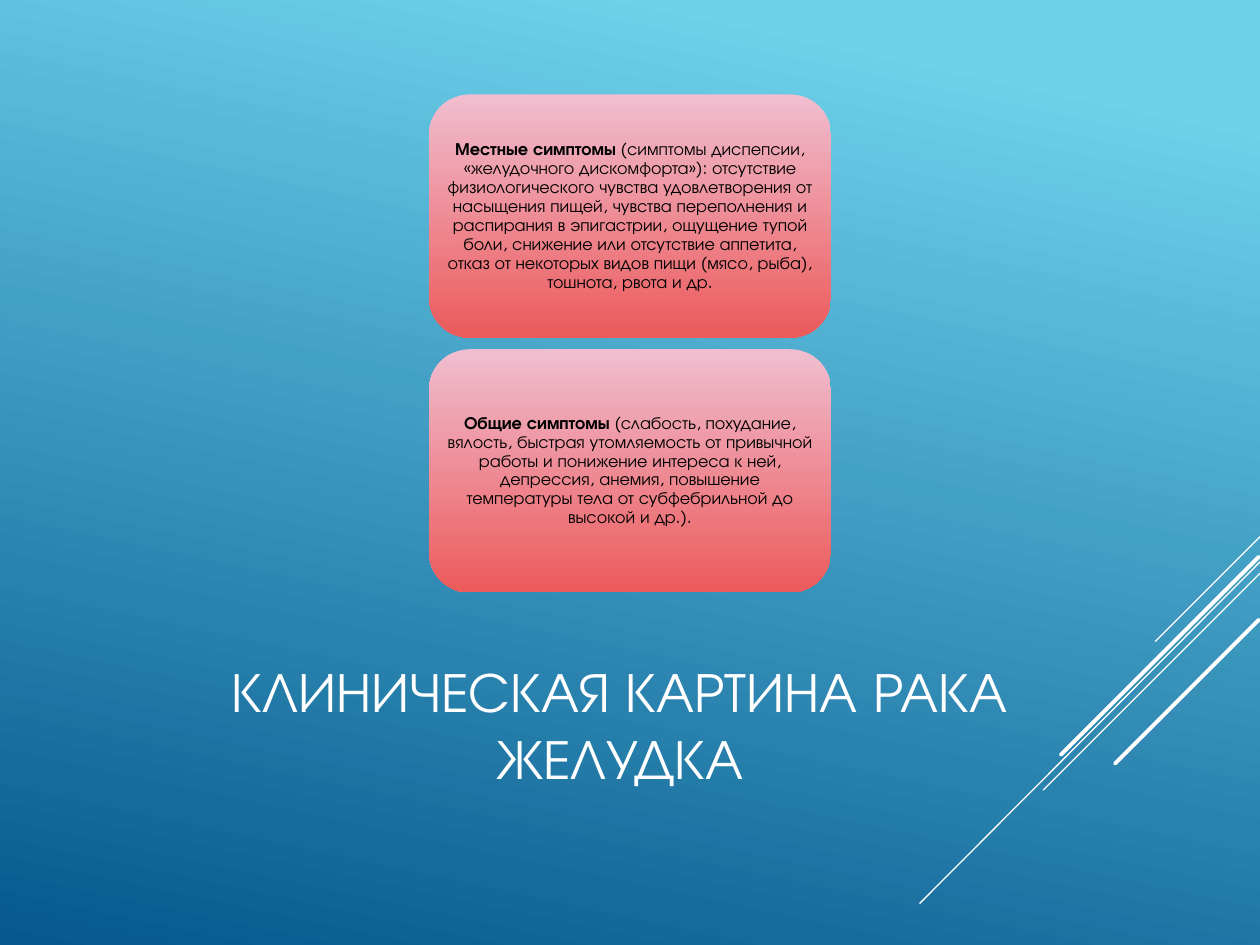
import dataclasses

import lxml.etree
import pptx
import pptx.dml.color
import pptx.enum.shapes
import pptx.enum.text
import pptx.oxml.ns
import pptx.util

Pt = pptx.util.Pt
FONT = "TeX Gyre Adventor"
WHITE, BLACK = "FFFFFF", "000000"
WIDE, HIGH = 720, 540


@dataclasses.dataclass
class Ray:
    x1: float
    y1: float
    x2: float
    y2: float
    width: float


@dataclasses.dataclass
class Card:
    head: str
    body: str


RAYS = [
    Ray(720, 306.7, 660.2, 366.5, 0.75),
    Ray(720, 321.1, 525.6, 516.2, 0.75),
    Ray(720, 327.6, 596.2, 451.4, 0.75),
    Ray(719.3, 318.2, 606.2, 431.3, 2.25),
    Ray(719.3, 354.2, 637.2, 436.3, 2.25),
]

CARDS = [
    Card("Местные симптомы",
         " (симптомы диспепсии, «желудочного дискомфорта»): отсутствие "
         "физиологического чувства удовлетворения от насыщения пищей, чувства "
         "переполнения и распирания в эпигастрии, ощущение тупой боли, снижение "
         "или отсутствие аппетита, отказ от некоторых видов пищи (мясо, рыба), "
         "тошнота, рвота и др."),
    Card("Общие симптомы ",
         "(слабость, похудание, вялость, быстрая утомляемость от привычной "
         "работы и понижение интереса к ней, депрессия, анемия, повышение "
         "температуры тела от субфебрильной до высокой и др.)."),
]
CARD_W, CARD_H, CARD_TOP, GAP = 229.7, 139, 54, 6.6


def color(code: str) -> pptx.dml.color.RGBColor:
    return pptx.dml.color.RGBColor.from_string(code)


def shade(fill, stops: list[tuple[float, str]], angle: float) -> None:
    """Apply a linear gradient; the angle runs clockwise."""
    fill.gradient()
    fill.gradient_angle = 360 - angle
    for stop, (place, code) in zip(fill.gradient_stops, stops):
        stop.position = place
        stop.color.rgb = color(code)


def add_run(para, text: str, size: float, code: str, bold: bool = False) -> None:
    run = para.add_run()
    run.text = text
    run.font.name = FONT
    run.font.size = Pt(size)
    run.font.bold = bold
    run.font.color.rgb = color(code)


def draw_ray(slide, ray: Ray) -> None:
    line = slide.shapes.add_connector(
        pptx.enum.shapes.MSO_CONNECTOR.STRAIGHT,
        Pt(ray.x1), Pt(ray.y1), Pt(ray.x2), Pt(ray.y2))
    line.line.color.rgb = color(WHITE)
    line.line.width = Pt(ray.width)
    props = line._element.spPr
    props.find(pptx.oxml.ns.qn("a:ln")).set("cap", "rnd")
    lxml.etree.SubElement(props, pptx.oxml.ns.qn("a:effectLst"))


def draw_card(slide, card: Card, top: float) -> None:
    box = slide.shapes.add_shape(
        pptx.enum.shapes.MSO_SHAPE.ROUNDED_RECTANGLE,
        Pt((WIDE - CARD_W) / 2), Pt(top), Pt(CARD_W), Pt(CARD_H))
    box.shadow.inherit = False
    box.line.fill.background()
    shade(box.fill, [(0, "F0BED0"), (1, "EC5A5B")], 90)
    frame = box.text_frame
    frame.word_wrap = True
    frame.vertical_anchor = pptx.enum.text.MSO_ANCHOR.MIDDLE
    frame.margin_left = frame.margin_right = Pt(3)
    frame.margin_top = frame.margin_bottom = Pt(1.5)
    para = frame.paragraphs[0]
    para.alignment = pptx.enum.text.PP_ALIGN.CENTER
    para.line_spacing = 0.9
    add_run(para, card.head, 10, BLACK, True)
    add_run(para, card.body, 10, BLACK)


def set_title(slide, text: str) -> None:
    title = slide.shapes.title
    title.left, title.top = Pt(102.2), Pt(354.2)
    title.width, title.height = Pt(504), Pt(118.8)
    frame = title.text_frame
    frame.word_wrap = True
    frame.auto_size = pptx.enum.text.MSO_AUTO_SIZE.NONE
    frame.vertical_anchor = pptx.enum.text.MSO_ANCHOR.MIDDLE
    para = frame.paragraphs[0]
    para.alignment = pptx.enum.text.PP_ALIGN.CENTER
    add_run(para, text, 32, WHITE)


def main() -> None:
    deck = pptx.Presentation()
    deck.slide_width, deck.slide_height = Pt(WIDE), Pt(HIGH)
    slide = deck.slides.add_slide(deck.slide_layouts.get_by_name("Title Only"))

    # Background and corner rays
    shade(slide.background.fill, [(0.1, "6ED2EB"), (1, "06588E")], 102)
    for ray in RAYS:
        draw_ray(slide, ray)

    # Title below the cards
    set_title(slide, "КЛИНИЧЕСКАЯ КАРТИНА РАКА ЖЕЛУДКА")

    # Symptom cards, stacked
    for i, card in enumerate(CARDS):
        draw_card(slide, card, CARD_TOP + i * (CARD_H + GAP))

    deck.save("out.pptx")


if __name__ == "__main__":
    main()
